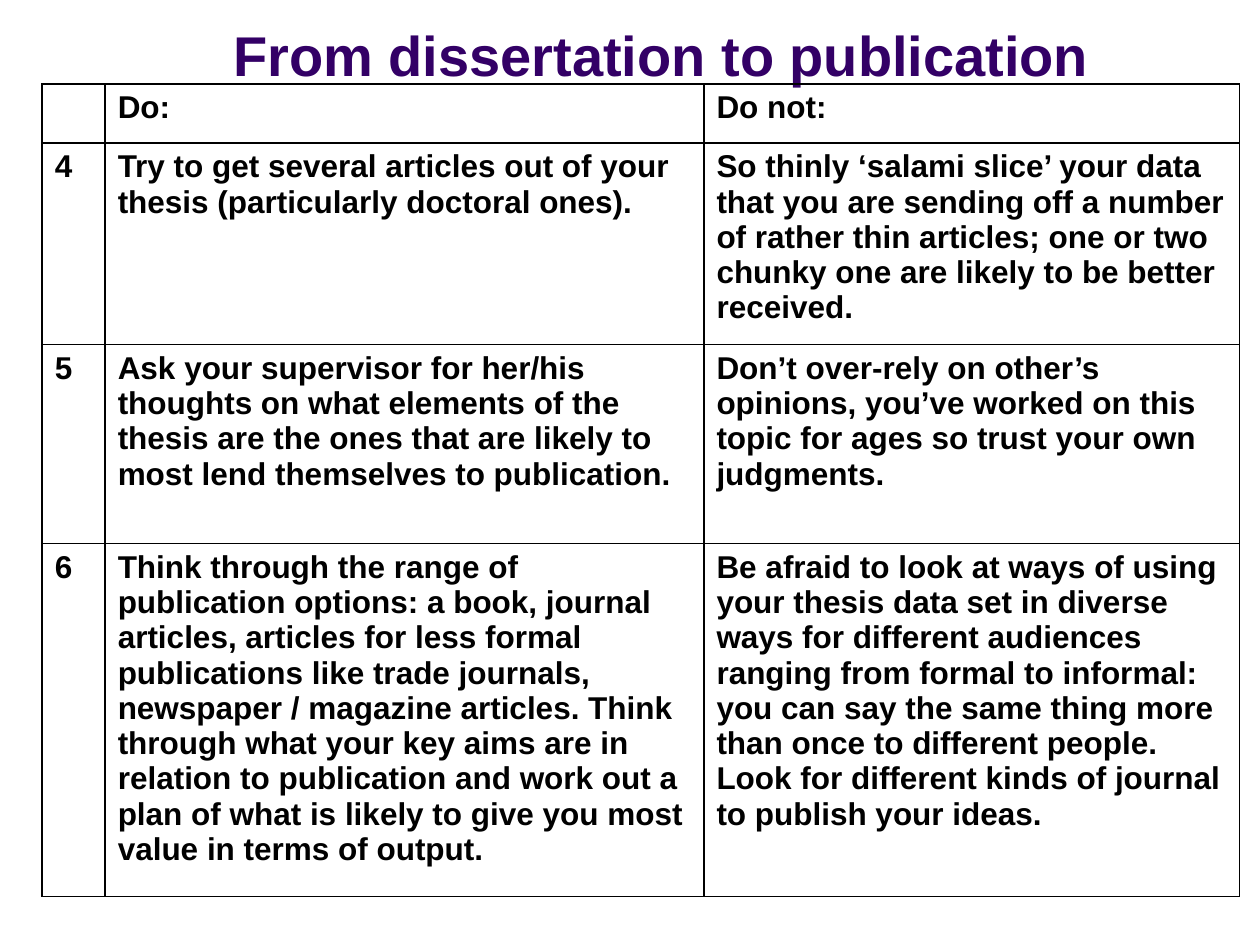
from lxml.etree import SubElement
from pptx import Presentation
from pptx.dml.color import RGBColor
from pptx.enum.text import MSO_ANCHOR, PP_ALIGN
from pptx.oxml.ns import qn
from pptx.util import Cm, Pt

TITLE = "From dissertation to publication"
ROWS = [
    ("", "Do:", "Do not:"),
    ("4",
     "Try to get several articles out of your thesis (particularly doctoral ones).",
     "So thinly ‘salami slice’ your data that you are sending off a number of rather "
     "thin articles; one or two chunky one are likely to be better received."),
    ("5",
     "Ask your supervisor for her/his thoughts on what elements of the thesis are the "
     "ones that are likely to most lend themselves to publication.",
     "Don’t over-rely on other’s opinions, you’ve worked on this topic for ages so "
     "trust your own judgments."),
    ("6",
     "Think through the range of publication options: a book, journal articles, "
     "articles for less formal publications like trade journals, newspaper / magazine "
     "articles. Think through what your key aims are in relation to publication and "
     "work out a plan of what is likely to give you most value in terms of output.",
     "Be afraid to look at ways of using your thesis data set in diverse ways for "
     "different audiences ranging from formal to informal: you can say the same thing "
     "more than once to different people. Look for different kinds of journal to "
     "publish your ideas."),
]
COL_WIDTHS = [1.27, 12.07, 10.8]
ROW_HEIGHTS = [1.19, 3.89, 4.01, 6.65]
TITLE_FONT = {"name": "Arial", "size": Pt(32), "bold": True}
CELL_FONT = {"name": "Arial", "size": Pt(18), "bold": True}
PURPLE, BLACK = "330066", "000000"


def write(tf, text, font, color):
    tf.word_wrap = True
    p = tf.paragraphs[0]
    if text:
        r = p.add_run()
        r.text = text
        for name, value in font.items():
            setattr(r.font, name, value)
        r.font.color.rgb = RGBColor.from_string(color)
    return p


def add_borders(cell, color, width):
    tc_pr = cell._tc.get_or_add_tcPr()
    for side in ("a:lnL", "a:lnR", "a:lnT", "a:lnB"):
        ln = SubElement(tc_pr, qn(side), w=str(width))
        fill = SubElement(ln, qn("a:solidFill"))
        SubElement(fill, qn("a:srgbClr"), val=color)


prs = Presentation()
prs.slide_width, prs.slide_height = Cm(25.4), Cm(19.05)
s = prs.slides.add_slide(prs.slide_layouts[6])

tf = s.shapes.add_textbox(Cm(1.27), Cm(0.43), Cm(20.95), Cm(1.47)).text_frame
tf.vertical_anchor = MSO_ANCHOR.BOTTOM
write(tf, TITLE, TITLE_FONT, PURPLE).alignment = PP_ALIGN.RIGHT

table = s.shapes.add_table(
    len(ROWS), len(COL_WIDTHS), Cm(0.85), Cm(1.69),
    Cm(sum(COL_WIDTHS)), Cm(sum(ROW_HEIGHTS))).table
table.first_row = table.horz_banding = False
for col, width in zip(table.columns, COL_WIDTHS):
    col.width = Cm(width)
for row, height, texts in zip(table.rows, ROW_HEIGHTS, ROWS):
    row.height = Cm(height)
    for cell, text in zip(row.cells, texts):
        write(cell.text_frame, text, CELL_FONT, BLACK)
        add_borders(cell, BLACK, Pt(1))
        cell.fill.background()

prs.save("out.pptx")
